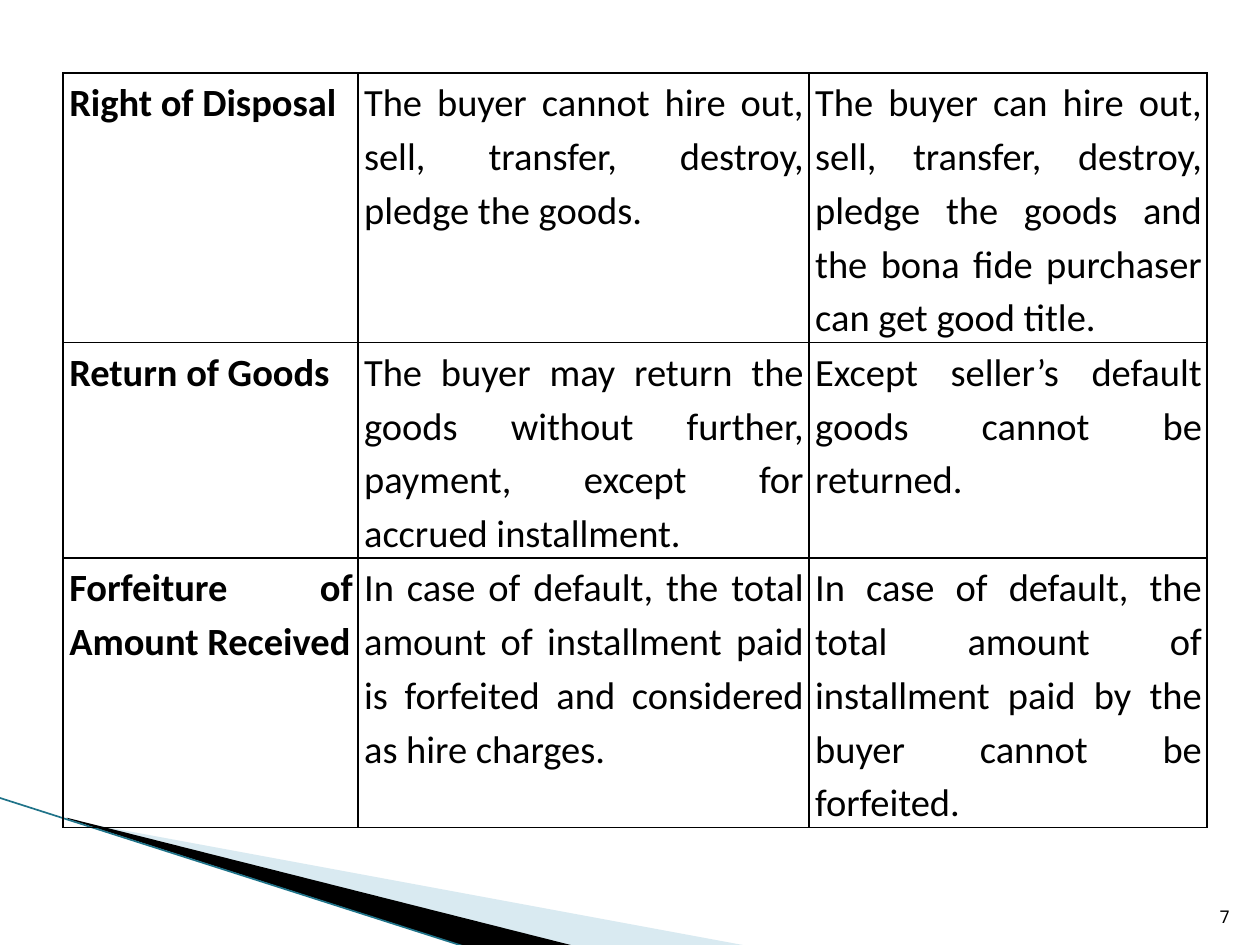
from dataclasses import dataclass

from lxml.etree import SubElement
from pptx import Presentation
from pptx.dml.color import RGBColor
from pptx.enum.shapes import MSO_CONNECTOR as CONN
from pptx.enum.text import MSO_ANCHOR as ANCHOR, PP_ALIGN as ALIGN
from pptx.oxml import parse_xml
from pptx.oxml.ns import nsdecls, qn
from pptx.util import Inches, Pt


@dataclass(frozen=True)
class Theme:
    ink: str = "000000"
    pale: str = "A0CBDC"
    edge: str = "1F7389"
    body_font: str = "Calibri"
    number_font: str = "Noto Sans Mono"
    body_size: float = 22
    number_size: float = 10
    border: float = 1
    edge_width: float = 0.95


THEME = Theme()

PALE_WEDGE = [(0.55, 6.51), (5.95, 7.51), (4.56, 7.51), (0.55, 6.5)]
PALE_FRAME = (0.78, 5.47, 4.16, 1.58)
DARK_WEDGE = [(0.53, 6.49), (4.57, 7.51), (3.72, 7.52), (0.54, 6.5)]
DARK_FRAME = (-0.06, 6.33, 4.16, 0.92)
COLUMNS = [2.34, 3.58, 3.16]
ROWS = [2.14, 1.71, 2.14]
COMPARISON = [
    ("Right of Disposal",
     "The buyer cannot hire out, sell, transfer, destroy, pledge the goods.",
     "The buyer can hire out, sell, transfer, destroy, pledge the goods "
     "and the bona fide purchaser can get good title."),
    ("Return of Goods",
     "The buyer may return the goods without further, payment, "
     "except for accrued installment.",
     "Except seller’s default goods cannot be returned."),
    ("Forfeiture of Amount Received",
     "In case of default, the total amount of installment paid is "
     "forfeited and considered as hire charges.",
     "In case of default, the total amount of installment paid by the "
     "buyer cannot be forfeited."),
]


def set_attrs(obj, values):
    for name, value in values.items():
        setattr(obj, name, value)


def write(p, text, para, font):
    set_attrs(p, para)
    r = p.add_run()
    r.text = text
    set_attrs(r.font, font)
    r.font.color.rgb = RGBColor.from_string(THEME.ink)


def reframe(sp, frame):
    left, top, width, height = (Inches(v) for v in frame)
    outline = next(sp._element.iter(qn("a:path")))
    for pt in outline.iter(qn("a:pt")):
        pt.set("x", str(int(pt.get("x")) + sp.left - left))
        pt.set("y", str(int(pt.get("y")) + sp.top - top))
    outline.set("w", str(width))
    outline.set("h", str(height))
    set_attrs(sp, dict(left=left, top=top, width=width, height=height))


def add_wedge(slide, points, frame, color, alpha=None):
    corners = [(Inches(x), Inches(y)) for x, y in points]
    builder = slide.shapes.build_freeform(*corners[0])
    builder.add_line_segments(corners[1:], close=True)
    sp = builder.convert_to_shape()
    reframe(sp, frame)
    sp.shadow.inherit = False
    sp.line.fill.background()
    sp.fill.solid()
    sp.fill.fore_color.rgb = RGBColor.from_string(color)
    if alpha:
        clr = sp.fill._xPr.find(qn("a:solidFill"))[0]
        SubElement(clr, qn("a:alpha")).set("val", str(alpha * 1000))


def add_edge(slide, start, end):
    line = slide.shapes.add_connector(
        CONN.STRAIGHT, *(Inches(v) for v in start + end))
    line.line.color.rgb = RGBColor.from_string(THEME.edge)
    line.line.width = Pt(THEME.edge_width)
    SubElement(line._element.spPr, qn("a:effectLst"))


def add_number(slide, text):
    sp = slide.shapes.add_textbox(
        Inches(9.46), Inches(7.01), Inches(0.4), Inches(0.4))
    tf = sp.text_frame
    set_attrs(tf, dict(word_wrap=True, vertical_anchor=ANCHOR.BOTTOM))
    write(tf.paragraphs[0], text, dict(alignment=ALIGN.RIGHT),
          dict(name=THEME.number_font, size=Pt(THEME.number_size)))


def add_borders(cell):
    tc_pr = cell._tc.get_or_add_tcPr()
    for i, side in enumerate("LRTB"):
        tc_pr.insert(i, parse_xml(
            f'<a:ln{side} {nsdecls("a")} w="{Pt(THEME.border)}"><a:solidFill>'
            f'<a:srgbClr val="{THEME.ink}"/></a:solidFill></a:ln{side}>'))


def add_comparison(slide):
    table = slide.shapes.add_table(
        len(ROWS), len(COLUMNS), Inches(0.5), Inches(0.58),
        Inches(sum(COLUMNS)), Inches(sum(ROWS))).table
    set_attrs(table, dict(first_row=False, horz_banding=False))
    for column, width in zip(table.columns, COLUMNS):
        column.width = Inches(width)
    for row, height, texts in zip(table.rows, ROWS, COMPARISON):
        row.height = Inches(height)
        for i, (cell, text) in enumerate(zip(row.cells, texts)):
            set_attrs(cell, dict(margin_left=Inches(0.05), margin_top=0,
                                 margin_right=Inches(0.04), margin_bottom=0))
            cell.fill.background()
            add_borders(cell)
            write(cell.text_frame.paragraphs[0], text,
                  dict(alignment=ALIGN.JUSTIFY, line_spacing=1.15),
                  dict(name=THEME.body_font, size=Pt(THEME.body_size),
                       bold=i == 0))


def main():
    prs = Presentation()
    set_attrs(prs, dict(slide_width=Inches(10), slide_height=Inches(7.5)))
    slide = prs.slides.add_slide(prs.slide_layouts[6])
    add_wedge(slide, PALE_WEDGE, PALE_FRAME, THEME.pale, alpha=40)
    add_wedge(slide, DARK_WEDGE, DARK_FRAME, THEME.ink)
    add_edge(slide, (-0.01, 6.33), (3.71, 7.52))
    add_number(slide, "7")
    add_comparison(slide)
    prs.save("out.pptx")


if __name__ == "__main__":
    main()
